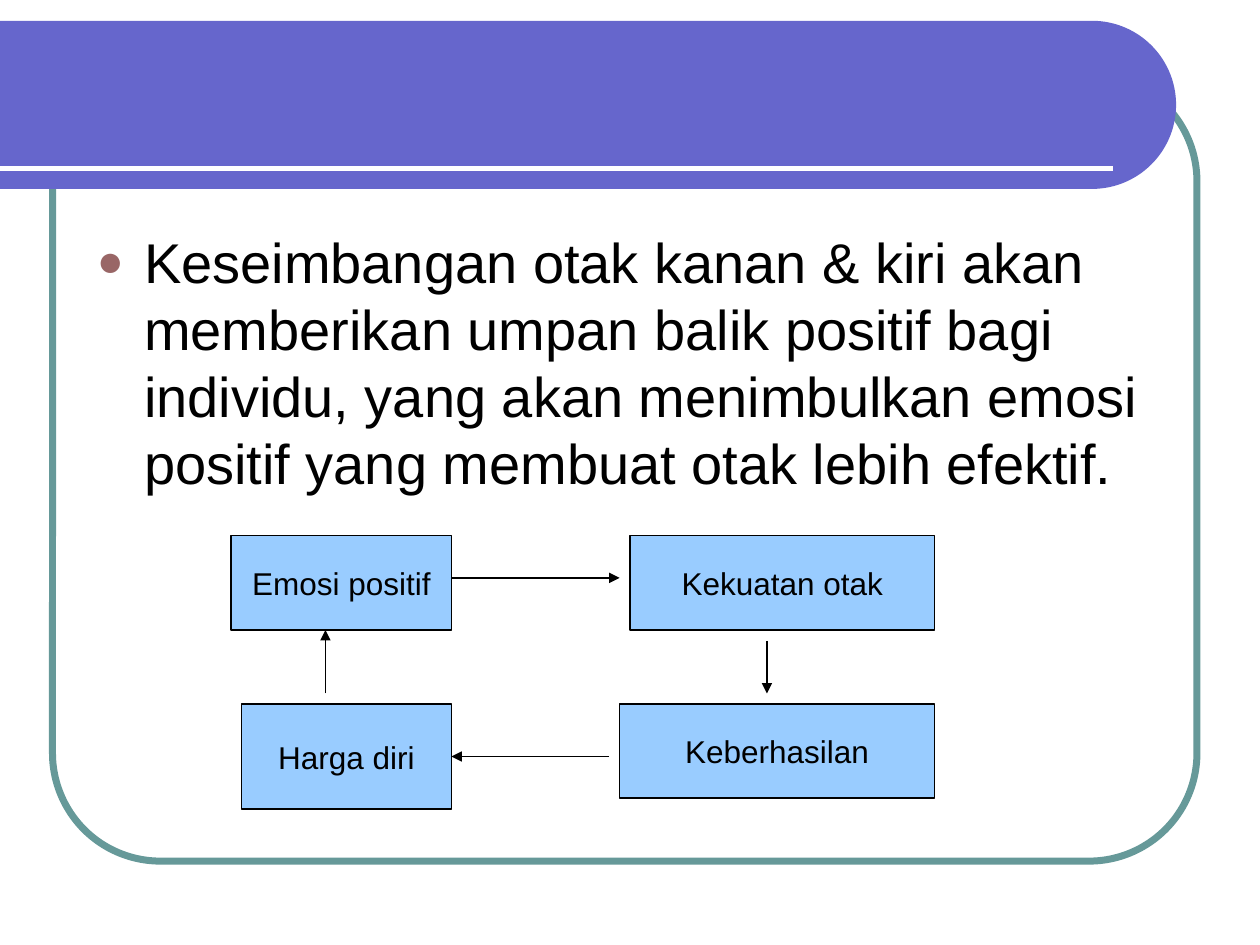
from math import cos, pi, sin

from lxml.etree import SubElement
from pptx import Presentation
from pptx.dml.color import RGBColor
from pptx.enum.shapes import MSO_CONNECTOR, MSO_SHAPE
from pptx.enum.text import MSO_ANCHOR, MSO_AUTO_SIZE, PP_ALIGN
from pptx.oxml.ns import qn
from pptx.util import Cm, Pt

FONT = "Arial"
RIGHT_SIDE = 3


def color(value):
    return RGBColor.from_string(value)


def format_text(para, size):
    for span in para.runs:
        span.font.name = FONT
        span.font.size = Pt(size)
        span.font.color.rgb = color("000000")


def add_line(slide, start, end, line_color, width, arrow=False):
    line = slide.shapes.add_connector(
        MSO_CONNECTOR.STRAIGHT, *(Cm(value) for value in start + end))
    line.line.color.rgb = color(line_color)
    line.line.width = Pt(width)
    if arrow:
        SubElement(line.line._get_or_add_ln(), qn("a:tailEnd"), type="triangle")
    SubElement(line._element.spPr, qn("a:effectLst"))
    return line


def add_frame(slide, left, top, width, height):
    frame = slide.shapes.add_shape(
        MSO_SHAPE.ROUNDED_RECTANGLE, Cm(left), Cm(top), Cm(width), Cm(height))
    frame.adjustments[0] = 0.137
    frame.shadow.inherit = False
    frame.fill.background()
    frame.line.color.rgb = color("669999")
    frame.line.width = Pt(4)


def add_banner(slide, left, top, width, height):
    # Band with a half-round right end
    radius = height / 2
    center_x, center_y = left + width - radius, top + radius
    steps = 60
    angles = [pi * step / steps - pi / 2 for step in range(steps + 1)]
    points = [(center_x + radius * cos(angle), center_y + radius * sin(angle))
              for angle in angles] + [(left, top + height)]
    builder = slide.shapes.build_freeform(Cm(left), Cm(top))
    builder.add_line_segments([(Cm(x), Cm(y)) for x, y in points], close=True)
    banner = builder.convert_to_shape()
    banner.shadow.inherit = False
    banner.fill.solid()
    banner.fill.fore_color.rgb = color("6666CC")
    banner.line.fill.background()
    # White rule near the lower edge
    rule_y = top + height - 0.42
    add_line(slide, (left, rule_y), (left + width - 1.27, rule_y), "FFFFFF", 3)


def fill_body(body, left, top, width, height):
    body.left, body.top, body.width, body.height = map(Cm, (left, top, width, height))
    frame = body.text_frame
    frame.text = ("Keseimbangan otak kanan & kiri akan memberikan umpan balik positif "
                  "bagi individu, yang akan menimbulkan emosi positif yang membuat "
                  "otak lebih efektif.")
    frame.auto_size = MSO_AUTO_SIZE.NONE
    para = frame.paragraphs[0]
    format_text(para, 32)
    # Hanging bullet
    props = para._p.get_or_add_pPr()
    props.set("marL", str(Cm(0.95)))
    props.set("indent", str(-Cm(0.95)))
    bullet_color = SubElement(props, qn("a:buClr"))
    SubElement(bullet_color, qn("a:srgbClr"), val="996666")
    SubElement(props, qn("a:buSzPct"), val="80000")
    SubElement(props, qn("a:buFont"), typeface=FONT)
    SubElement(props, qn("a:buChar"), char="●")


def add_step(slide, text, left, top, width, height):
    box = slide.shapes.add_shape(
        MSO_SHAPE.RECTANGLE, Cm(left), Cm(top), Cm(width), Cm(height))
    box.shadow.inherit = False
    box.fill.solid()
    box.fill.fore_color.rgb = color("99CCFF")
    box.line.color.rgb = color("000000")
    box.line.width = Pt(0.75)
    frame = box.text_frame
    frame.text = text
    frame.word_wrap = False
    frame.vertical_anchor = MSO_ANCHOR.MIDDLE
    para = frame.paragraphs[0]
    para.alignment = PP_ALIGN.CENTER
    format_text(para, 18)
    return box


def add_cycle(slide, left, top):
    # Steps: text, then offset and size within the cycle
    steps = [
        ("Emosi positif", 0, 0, 4.45, 1.9),
        ("Kekuatan otak", 8.04, 0, 6.14, 1.9),
        ("Harga diri", 0.21, 3.39, 4.23, 2.12),
        ("Keberhasilan", 7.83, 3.39, 6.35, 1.9),
    ]
    boxes = {text: add_step(slide, text, left + x, top + y, width, height)
             for text, x, y, width, height in steps}
    # Arrows, clockwise from the first step
    arrows = [
        ((4.45, 0.85), (7.83, 0.85), None),
        ((10.8, 2.12), (10.8, 3.18), None),
        ((7.62, 4.45), (4.45, 4.45), "Harga diri"),
        ((1.9, 3.18), (1.9, 1.9), None),
    ]
    for start, end, target in arrows:
        arrow = add_line(slide, (left + start[0], top + start[1]),
                         (left + end[0], top + end[1]), "000000", 0.75, arrow=True)
        if target:
            arrow.end_connect(boxes[target], RIGHT_SIDE)


def main():
    deck = Presentation()
    deck.slide_width, deck.slide_height = Cm(25.4), Cm(19.05)
    slide = deck.slides.add_slide(deck.slide_layouts[1])
    # The banner carries no title
    title = slide.shapes.title._element
    title.getparent().remove(title)

    add_frame(slide, 1.06, 1.48, 23.07, 15.88)
    add_banner(slide, 0, 0.42, 23.71, 3.39)
    fill_body(slide.placeholders[1], 1.7, 4.45, 22.01, 12.28)
    add_cycle(slide, 4.66, 10.8)
    deck.save("out.pptx")


if __name__ == "__main__":
    main()
